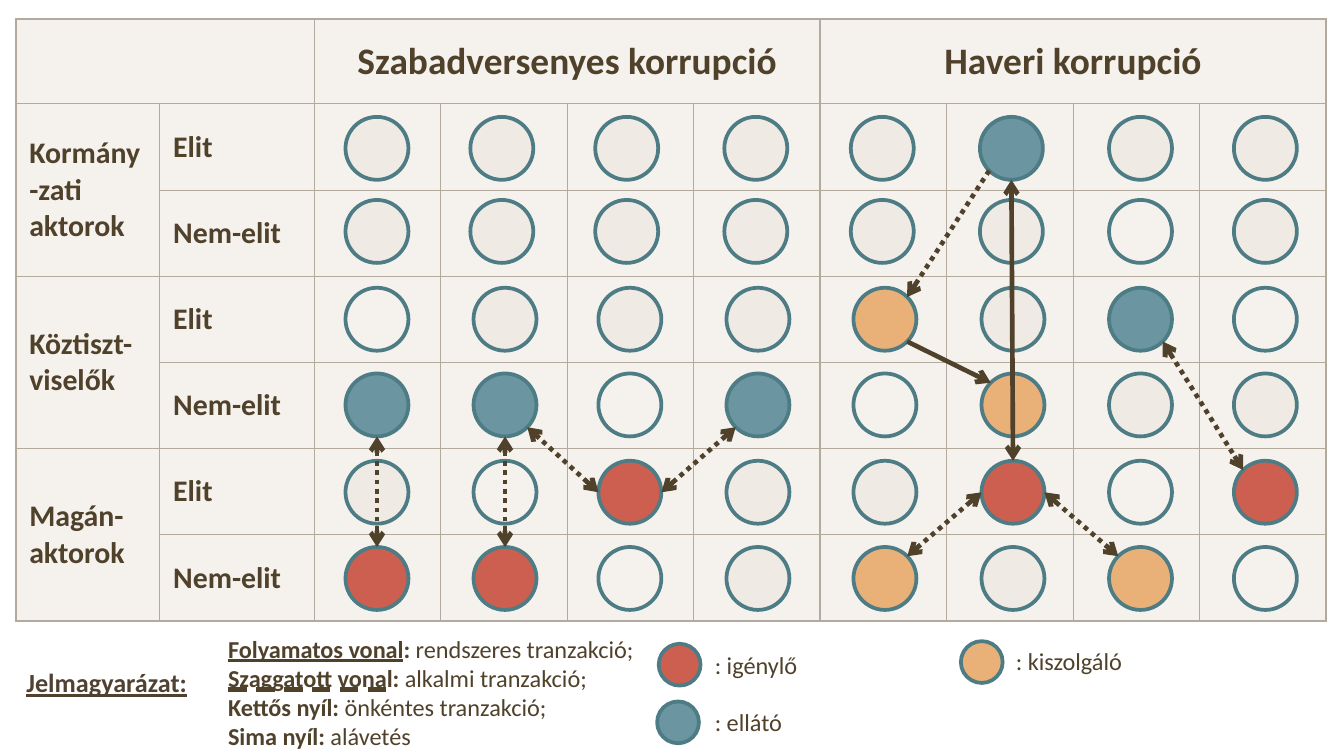
"""Build a slide comparing free-market and crony corruption networks."""
from math import cos, radians, sin

from lxml import etree
from pptx import Presentation
from pptx.dml.color import RGBColor
from pptx.enum.dml import MSO_LINE
from pptx.enum.shapes import MSO_CONNECTOR, MSO_SHAPE
from pptx.enum.text import MSO_ANCHOR, MSO_AUTO_SIZE, MSO_UNDERLINE, PP_ALIGN
from pptx.oxml.ns import qn
from pptx.util import Cm, Pt

OVAL = MSO_SHAPE.OVAL
LINE = MSO_CONNECTOR.STRAIGHT
DOT = MSO_LINE.ROUND_DOT
MIDDLE = MSO_ANCHOR.MIDDLE
LEFT, CENTER = PP_ALIGN.LEFT, PP_ALIGN.CENTER
GROW = MSO_AUTO_SIZE.SHAPE_TO_FIT_TEXT
SINGLE, DASHED = MSO_UNDERLINE.SINGLE_LINE, MSO_UNDERLINE.DASH_HEAVY_LINE

COLORS = {
    "text": "50412B", "key": "504131", "border": "B3A99D", "ring": "4D7C85",
    "pale": "EFEAE4", "blue": "6B95A1", "red": "CD5F50", "orange": "E9B178",
}
FILLS = {"g": "pale", "b": "blue", "r": "red", "o": "orange"}
NODES = ["gggggbgg", "gggggg.g", ".gggogb.", "bb.b.ogg", "g.rggr.r", "rr.gogo."]
TOPS = [2.21, 3.78, 5.44, 7.06, 8.71, 10.34]
UPPER = [6.53, 8.89, 11.25, 13.69, 16.08, 18.52, 20.96, 23.32]
LOWER = [6.53, 8.95, 11.31, 13.73, 16.13, 18.55, 20.96, 23.32]
SIZE = 1.19
ANGLES = {side: 45 * i for i, side in
          enumerate(["E", "SE", "S", "SW", "W", "NW", "N", "NE"])}
LINKS = [
    ((3, 0, "S"), (5, 0, "N"), True, True),
    ((3, 1, "S"), (5, 1, "N"), True, True),
    ((4, 2, "W"), (3, 1, "SE"), True, True),
    ((4, 2, "E"), (3, 3, "SW"), True, True),
    ((4, 5, "W"), (5, 4, "NE"), True, True),
    ((0, 5, "S"), (4, 5, "N"), False, True),
    ((4, 5, "E"), (5, 6, "NW"), True, True),
    ((2, 4, "SE"), (3, 5, "NW"), False, False),
    ((2, 6, "SE"), (4, 7, "NW"), True, True),
    ((0, 5, "SW"), (2, 4, "NE"), True, False),
]
RULES = [
    [("Folyamatos vonal", True, SINGLE), (": ", True, None),
     ("rendszeres tranzakció;", False, None)],
    [("Szaggatott vonal", True, DASHED), (": ", True, None),
     ("alkalmi tranzakció;", False, None), ("\n", False, None),
     ("Kettős nyíl: ", True, None), ("önkéntes tranzakció;", False, None)],
    [("Sima nyíl: ", True, None), ("alávetés", False, None)],
]
KEYS = [
    ("red", 12.45, 12.17, ": igénylő", 13.26, 12.17, 2.08),
    ("orange", 18.16, 12.12, ": kiszolgáló", 18.95, 12.09, 2.54),
    ("blue", 12.42, 13.26, ": ellátó", 13.26, 13.23, 1.8),
]


def color(name):
    """Return a palette colour."""
    return RGBColor.from_string(COLORS[name])


def write(frame, text, size=13, bold=False, line=None, tint="text", align=LEFT):
    """Write a string, or paragraphs of (text, bold, underline) runs."""
    paras = [[(text, bold, line)]] if isinstance(text, str) else text
    for i, runs in enumerate(paras):
        para = frame.add_paragraph() if i else frame.paragraphs[0]
        para.alignment = align
        for words, heavy, under in runs:
            if words == "\n":
                para.add_line_break()
                continue
            run = para.add_run()
            run.text = words
            font = run.font
            font.name, font.size, font.bold = "Calibri", Pt(size), heavy
            font.underline = under
            font.color.rgb = color(tint)


def add_text(slide, text, left, top, width, height, wrap=True, **look):
    """Add a text box."""
    frame = slide.shapes.add_textbox(
        Cm(left), Cm(top), Cm(width), Cm(height)).text_frame
    frame.word_wrap = wrap
    frame.auto_size = GROW
    frame.vertical_anchor = MIDDLE
    write(frame, text, **look)


def add_ring(slide, left, top, size, fill):
    """Add an outlined circle, unfilled when fill is None."""
    ring = slide.shapes.add_shape(OVAL, Cm(left), Cm(top), Cm(size), Cm(size))
    ring.shadow.inherit = False
    ring.line.color.rgb = color("ring")
    ring.line.width = Pt(2)
    if fill:
        ring.fill.solid()
        ring.fill.fore_color.rgb = color(fill)
    else:
        ring.fill.background()


def spot(row, col):
    """Return the left and top of a node."""
    return (UPPER if row < 2 else LOWER)[col], TOPS[row]


def edge(row, col, side):
    """Return the point on a node's rim at a compass side."""
    left, top = spot(row, col)
    turn, half = radians(ANGLES[side]), SIZE / 2
    return Cm(left + half + half * cos(turn)), Cm(top + half + half * sin(turn))


def add_link(slide, start, end, dotted, double):
    """Join two nodes with an arrow."""
    link = slide.shapes.add_connector(LINE, *edge(*start), *edge(*end))
    link.line.color.rgb = color("text")
    link.line.width = Pt(2.5)
    if dotted:
        link.line.dash_style = DOT
    pen = link.line._get_or_add_ln()
    for tag in ["a:headEnd", "a:tailEnd"] if double else ["a:tailEnd"]:
        etree.SubElement(pen, qn(tag), type="arrow")
    etree.SubElement(link._element.spPr, qn("a:effectLst"))


def style_cell(cell, row, col):
    """Fill and border a cell, with thicker lines around the blocks."""
    cell.vertical_anchor = MIDDLE
    cell.fill.solid()
    cell.fill.fore_color.rgb = color("pale")
    props = cell._tc.get_or_add_tcPr()
    etree.SubElement(props.find(".//" + qn("a:srgbClr")), qn("a:alpha"), val="60000")
    thick = {
        "L": col in (0, 2, 6),
        "R": col + cell.span_width in (2, 6, 10),
        "T": row == 0,
        "B": row + cell.span_height == 7,
    }
    for i, (side, wide) in enumerate(thick.items()):
        pen = etree.Element(qn("a:ln" + side), w=str(Pt(1 if wide else 0.5)))
        fill = etree.SubElement(pen, qn("a:solidFill"))
        etree.SubElement(fill, qn("a:srgbClr"), val=COLORS["border"])
        props.insert(i, pen)


def add_grid(slide):
    """Add the table of actors and corruption types."""
    grid = slide.shapes.add_table(
        7, 10, Cm(0.3), Cm(0.36), Cm(24.79), Cm(11.4)).table
    grid.first_row = grid.horz_banding = False
    for col, width in zip(grid.columns, [2.72, 2.92] + [2.39] * 8):
        col.width = Cm(width)
    for row, height in zip(grid.rows, [1.6] + [1.63] * 6):
        row.height = Cm(height)
    for first, last in [(0, 1), (2, 5), (6, 9)]:
        grid.cell(0, first).merge(grid.cell(0, last))
    for top in (1, 3, 5):
        grid.cell(top, 0).merge(grid.cell(top + 1, 0))
    for row in range(7):
        for col in range(10):
            style_cell(grid.cell(row, col), row, col)
    for col, text in [(2, "Szabadversenyes korrupció"), (6, "Haveri korrupció")]:
        write(grid.cell(0, col).text_frame, text, size=20, bold=True, align=CENTER)
    names = ["Kormány-zati aktorok", "Köztiszt-viselők", "Magán-aktorok"]
    for i, name in enumerate(names):
        top = 2 * i + 1
        for row, col, text in [(top, 0, name), (top, 1, "Elit"),
                               (top + 1, 1, "Nem-elit")]:
            write(grid.cell(row, col).text_frame, text, size=16, bold=True)


def add_legend(slide):
    """Add the legend under the table."""
    add_text(slide, RULES, 4.06, 11.84, 8.41, 2.49)
    for fill, left, top, text, start, head, width in KEYS:
        add_ring(slide, left, top, 0.79, fill)
        add_text(slide, text, start, head, width, 0.81, wrap=False)
    add_text(slide, "Jelmagyarázat:", 0.25, 12.47, 3.81, 0.86,
             size=14, bold=True, line=SINGLE, tint="key")


def main():
    """Build and save the slide."""
    deck = Presentation()
    deck.slide_width, deck.slide_height = Cm(25.4), Cm(14.29)
    slide = deck.slides.add_slide(deck.slide_layouts[6])
    add_grid(slide)
    for row, marks in enumerate(NODES):
        for col, mark in enumerate(marks):
            add_ring(slide, *spot(row, col), SIZE, FILLS.get(mark))
    for link in LINKS:
        add_link(slide, *link)
    add_legend(slide)
    deck.save("out.pptx")


if __name__ == "__main__":
    main()
